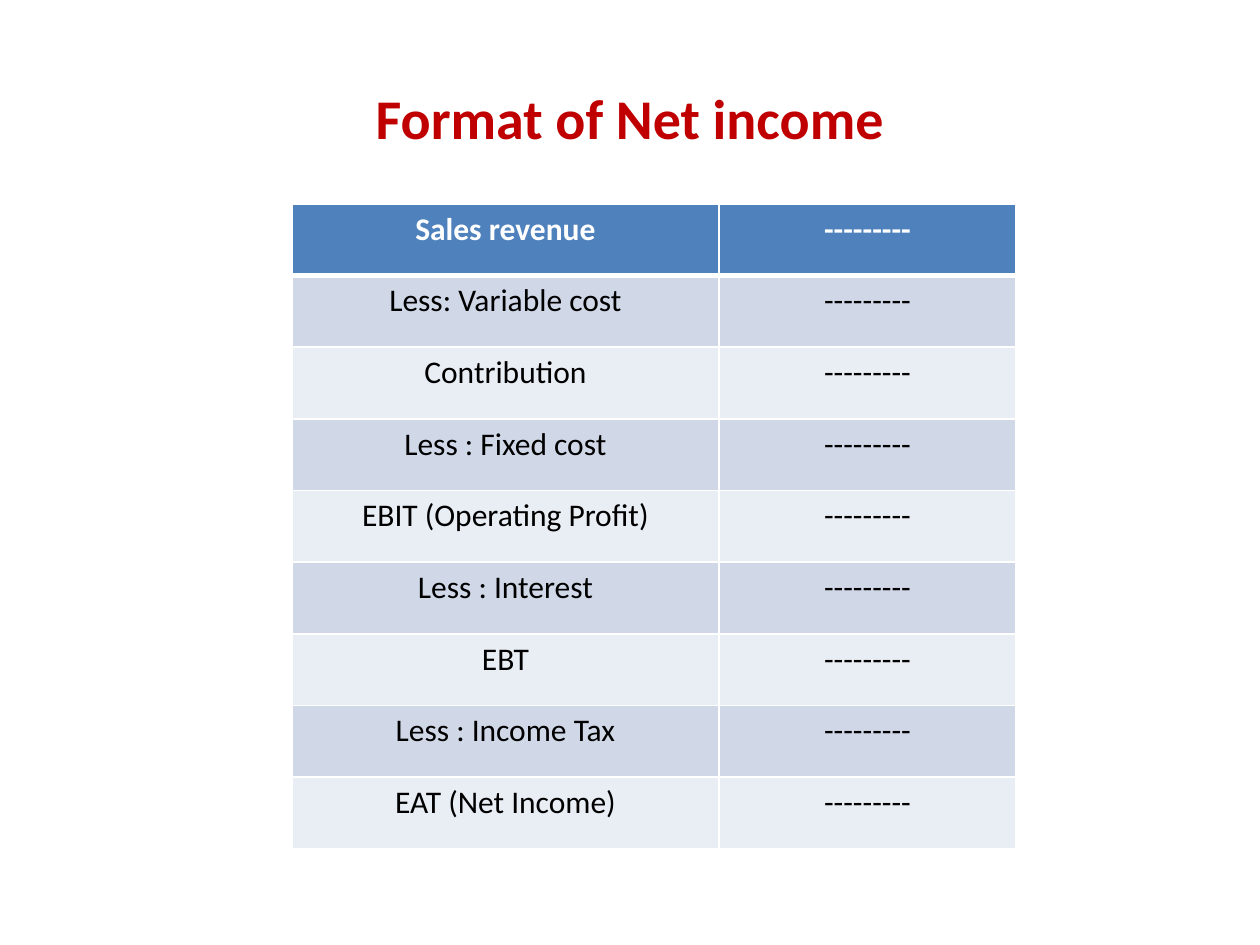
from lxml import etree
from pptx import Presentation
from pptx import util as u
from pptx.dml.color import RGBColor
from pptx.enum import text
from pptx.oxml import ns

PX = u.Inches(1) / 126
RED = RGBColor(0xC0, 0x00, 0x00)
WHITE = RGBColor(0xFF, 0xFF, 0xFF)
BLACK = RGBColor(0x00, 0x00, 0x00)
BLUE = RGBColor(0x4F, 0x81, 0xBD)
BAND_DARK = RGBColor(0xD0, 0xD8, 0xE8)
BAND_LIGHT = RGBColor(0xE9, 0xED, 0xF4)

ITEMS = ["Sales revenue", "Less: Variable cost", "Contribution",
         "Less : Fixed cost", "EBIT (Operating Profit)", "Less : Interest",
         "EBT", "Less : Income Tax", "EAT (Net Income)"]
AMOUNT = "---------"


def px(n):
    return u.Emu(round(n * PX))


def style_text(p, size, color, bold):
    p.alignment = text.PP_ALIGN.CENTER
    for r in p.runs:
        r.font.name = "Calibri"
        r.font.size = u.Pt(size)
        r.font.bold = bold
        r.font.color.rgb = color


prs = Presentation()
prs.slide_width, prs.slide_height = px(1260), px(945)
s = prs.slides.add_slide(prs.slide_layouts[6])

# Title
tf = s.shapes.add_textbox(px(63), px(38), px(1134), px(158)).text_frame
tf.word_wrap = True
tf.vertical_anchor = text.MSO_ANCHOR.MIDDLE
tf.text = "Format of Net income"
style_text(tf.paragraphs[0], 32, RED, True)

# Net income table
table = s.shapes.add_table(len(ITEMS), 2, px(292), px(204), px(724), px(645)).table
table.columns[0].width = px(427)
table.columns[1].width = px(297)

for i, item in enumerate(ITEMS):
    header = i == 0
    for j, label in enumerate((item, AMOUNT)):
        cell = table.cell(i, j)
        cell.text_frame.text = label
        style_text(cell.text_frame.paragraphs[0], 18, WHITE if header else BLACK, header)

        # White borders, thicker under the header
        tc_pr = cell._tc.get_or_add_tcPr()
        for side in "LRTB":
            thick = (i, side) in ((0, "B"), (1, "T"))
            ln = etree.SubElement(tc_pr, ns.qn("a:ln" + side), w=str(u.Pt(3 if thick else 1)))
            solid = etree.SubElement(ln, ns.qn("a:solidFill"))
            etree.SubElement(solid, ns.qn("a:srgbClr"), val=str(WHITE))

        # Header and alternating bands
        cell.fill.solid()
        cell.fill.fore_color.rgb = BLUE if header else BAND_DARK if i % 2 else BAND_LIGHT

prs.save("out.pptx")
